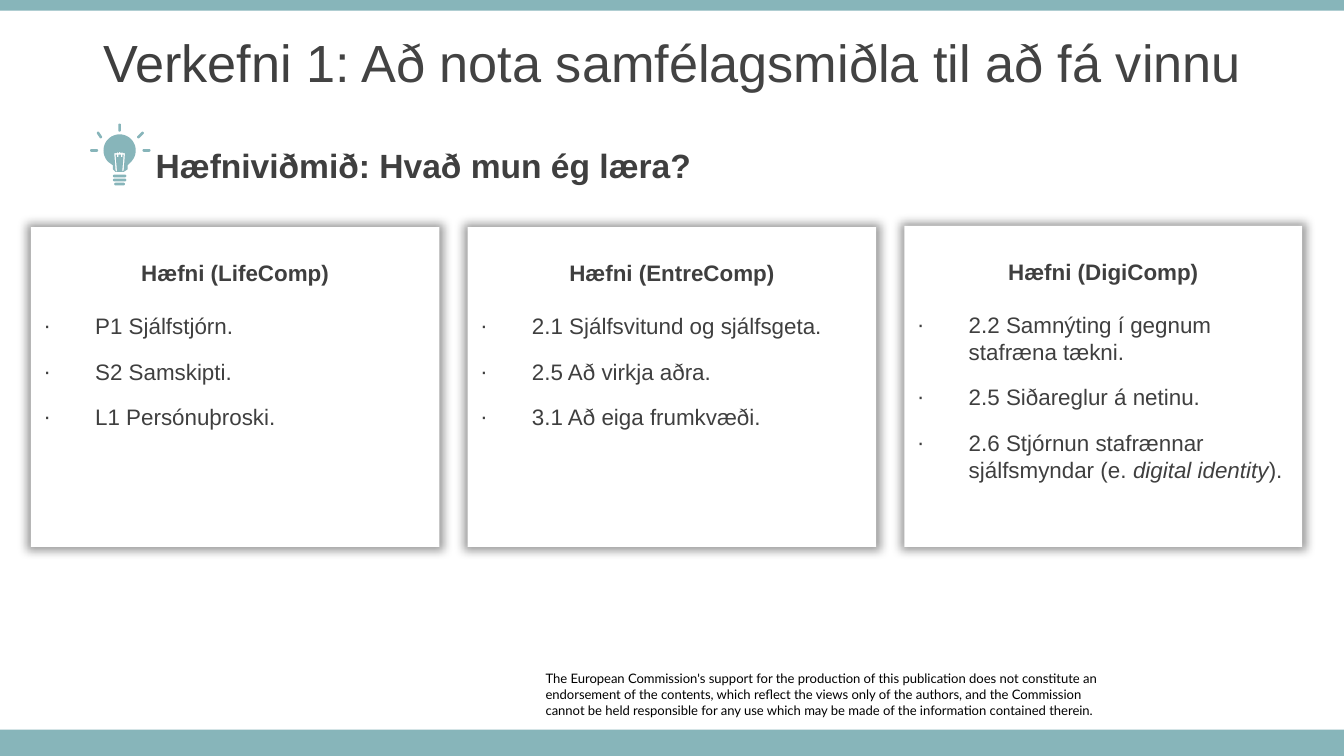
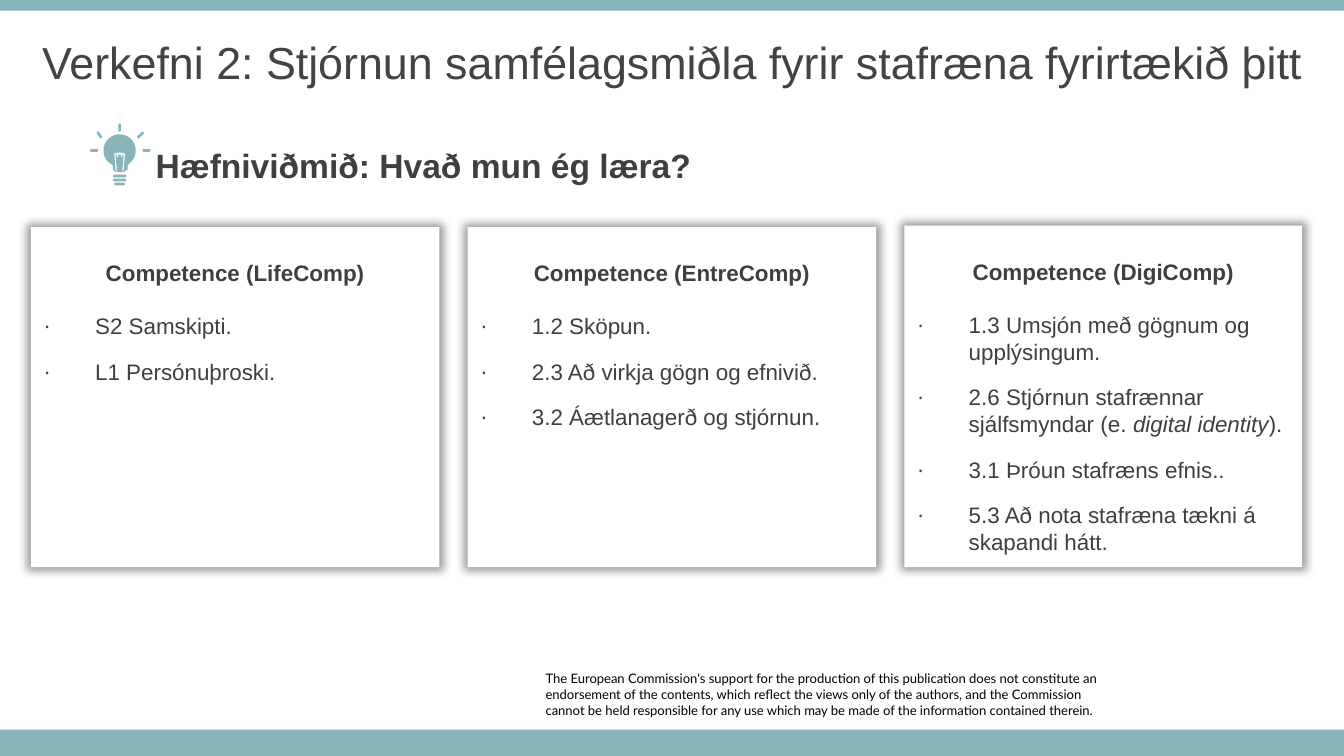
import math

from lxml import etree
from pptx import Presentation
from pptx.dml.color import RGBColor
from pptx.enum.shapes import MSO_SHAPE
from pptx.enum.text import MSO_ANCHOR, PP_ALIGN
from pptx.oxml.ns import qn
from pptx.util import Inches, Pt

RECTANGLE = MSO_SHAPE.RECTANGLE
CENTER, LEFT = PP_ALIGN.CENTER, PP_ALIGN.LEFT
TOP, MIDDLE = MSO_ANCHOR.TOP, MSO_ANCHOR.MIDDLE

TEAL = RGBColor(0x87, 0xB5, 0xBA)
DARK = RGBColor(0x3F, 0x3F, 0x3F)
TITLE_GRAY = RGBColor(0x43, 0x43, 0x43)
WHITE = RGBColor(0xFF, 0xFF, 0xFF)
BLACK = RGBColor(0, 0, 0)
TEXT_FONT, NOTICE_FONT = "Arial", "Lato"

SLIDE_WIDTH = 10
SLIDE_HEIGHT = SLIDE_WIDTH * 9 / 16
CARD_LEFT, CARD_STEP = 0.23, 3.25
CARD_FRAMES = [(1.69, 3.04), (1.69, 3.04), (1.68, 2.96)]  # top, width
BULLET_INDENT = Inches(0.38)

QUESTION = "Hæfniviðmið: Hvað mun ég læra?"
NOTICE = [
    "The European Commission's support for the production of this publication "
    "does not constitute an endorsement of the contents, which reflect the views "
    "only of the authors, and the Commission",
    "cannot be held responsible for any use which may be made of the information "
    "contained therein.",
]

# Light bulb, in inches on the page
BULB_X, BULB_Y, BULB_RADIUS = 0.89, 1.12, 0.12
BULB_BARS = [
    ((0.68, 1.12), (0.72, 1.12)), ((0.73, 0.99), (0.75, 1.02)),
    ((0.89, 0.93), (0.89, 0.97)), ((1.06, 0.99), (1.03, 1.02)),
    ((1.07, 1.12), (1.11, 1.12)), ((0.85, 1.31), (0.93, 1.31)),
    ((0.85, 1.34), (0.93, 1.34)), ((0.86, 1.37), (0.92, 1.37)),
]
HALF_FILAMENT = [
    (0.89, 1.13), (0.88, 1.14), (0.87, 1.13), (0.87, 1.14), (0.85, 1.14),
    (0.86, 1.27), (0.87, 1.28), (0.87, 1.27), (0.86, 1.15), (0.87, 1.15),
    (0.87, 1.17), (0.88, 1.17), (0.88, 1.15), (0.89, 1.15), (0.89, 1.17),
]

# Every card: heading, then entries; the odd spans of an entry are italic
IDENTITY = ["2.6 Stjórnun stafrænnar sjálfsmyndar (e. ", "digital identity", ")."]
SLIDES = [
    {
        "title": [("Verkefni ", DARK),
                  ("1: Að nota samfélagsmiðla til að fá vinnu", TITLE_GRAY)],
        "title_size": 28,
        "card_bottom": 4.07,
        "cards": [
            ("Hæfni (LifeComp)",
             [["P1 Sjálfstjórn."], ["S2 Samskipti."], ["L1 Persónuþroski."]]),
            ("Hæfni (EntreComp)",
             [["2.1 Sjálfsvitund og sjálfsgeta."], ["2.5 Að virkja aðra."],
              ["3.1 Að eiga frumkvæði."]]),
            ("Hæfni (DigiComp)",
             [["2.2 Samnýting í gegnum stafræna tækni."],
              ["2.5 Siðareglur á netinu."], IDENTITY]),
        ],
    },
    {
        "title": [("Verkefni 2: Stjórnun samfélagsmiðla fyrir stafræna fyrirtækið þitt",
                   TITLE_GRAY)],
        "title_size": 24,
        "card_bottom": 4.22,
        "cards": [
            ("Competence (LifeComp)", [["S2 Samskipti."], ["L1 Persónuþroski."]]),
            ("Competence (EntreComp)",
             [["1.2 Sköpun."], ["2.3 Að virkja gögn og efnivið."],
              ["3.2 Áætlanagerð og stjórnun."]]),
            ("Competence (DigiComp)",
             [["1.3 Umsjón með gögnum og upplýsingum."], IDENTITY,
              ["3.1 Þróun stafræns efnis.."],
              ["5.3 Að nota stafræna tækni á skapandi hátt."]]),
        ],
    },
]


def add_span(para, text, size, color=DARK, font=TEXT_FONT, bold=False, italic=False):
    span = para.add_run()
    span.text = text
    span.font.name = font
    span.font.size = Pt(size)
    span.font.color.rgb = color
    span.font.bold = bold
    span.font.italic = italic


def set_insets(frame, side, top, bottom):
    frame.word_wrap = True
    frame.margin_left = frame.margin_right = Inches(side)
    frame.margin_top, frame.margin_bottom = Inches(top), Inches(bottom)


def add_text_box(page, left, top, width, height, side=0.1, edge=0.05, anchor=MIDDLE):
    box = page.shapes.add_textbox(*map(Inches, (left, top, width, height)))
    frame = box.text_frame
    set_insets(frame, side, edge, edge)
    frame.vertical_anchor = anchor
    return frame


def add_rectangle(page, left, top, width, height, color):
    box = page.shapes.add_shape(RECTANGLE, *map(Inches, (left, top, width, height)))
    box.fill.solid()
    box.fill.fore_color.rgb = color
    box.line.fill.background()
    box.shadow.inherit = False
    return box


def add_glow_shadow(box):
    """Give the box an even soft shadow on all sides."""
    effects = box._element.spPr.find(qn("a:effectLst"))
    shadow = etree.SubElement(effects, qn("a:outerShdw"), blurRad=str(Pt(5)),
                              sx="102000", sy="102000", algn="ctr", rotWithShape="0")
    color = etree.SubElement(shadow, qn("a:srgbClr"), val=str(BLACK))
    etree.SubElement(color, qn("a:alpha"), val="40000")


def set_bullet(para):
    properties = para._p.get_or_add_pPr()
    properties.set("marL", str(BULLET_INDENT))
    properties.set("indent", str(-BULLET_INDENT))
    color = etree.SubElement(properties, qn("a:buClr"))
    etree.SubElement(color, qn("a:srgbClr"), val=str(DARK))
    etree.SubElement(properties, qn("a:buFont"), typeface=TEXT_FONT)
    etree.SubElement(properties, qn("a:buChar"), char="∙")


def add_card(page, left, top, width, height, heading, entries):
    card = add_rectangle(page, left, top, width, height, WHITE)
    add_glow_shadow(card)
    frame = card.text_frame
    set_insets(frame, 0.1, 0.24, 0.05)
    frame.vertical_anchor = TOP
    para = frame.paragraphs[0]
    para.alignment = CENTER
    add_span(para, heading, 12, bold=True)
    for number, spans in enumerate(entries):
        para = frame.add_paragraph()
        set_bullet(para)
        para.alignment = LEFT
        para.space_before = Pt(10 if number else 14)
        for index, text in enumerate(spans):
            add_span(para, text, 12, italic=index % 2 == 1)


def arc(x, y, radius, start, end, steps):
    """Points on an arc, with angles in degrees, clockwise from the right."""
    angles = [math.radians(start + (end - start) * i / steps) for i in range(steps + 1)]
    return [(x + radius * math.cos(a), y + radius * math.sin(a)) for a in angles]


def rounded_bar(start, end):
    angle = math.degrees(math.atan2(end[1] - start[1], end[0] - start[0]))
    return (arc(*start, 0.01, angle + 90, angle + 270, 6)
            + arc(*end, 0.01, angle - 90, angle + 90, 6))


def add_light_bulb(page):
    glass = arc(BULB_X, BULB_Y, BULB_RADIUS, 135, 405, 36)
    glass += [(0.95, 1.23), (0.95, 1.26), (0.92, 1.28),
              (0.86, 1.28), (0.84, 1.26), (0.84, 1.23)]
    mirrored = [(2 * BULB_X - x, y) for x, y in reversed(HALF_FILAMENT)]
    contours = [glass, HALF_FILAMENT + mirrored]
    contours += [rounded_bar(*bar) for bar in BULB_BARS]
    builder = None
    for contour in contours:
        first, *rest = [(Inches(x), Inches(y)) for x, y in contour]
        if builder is None:
            builder = page.shapes.build_freeform(*first)
        else:
            builder.move_to(*first)
        builder.add_line_segments(rest, close=True)
    bulb = builder.convert_to_shape()
    bulb.fill.solid()
    bulb.fill.fore_color.rgb = TEAL
    bulb.line.fill.background()
    bulb.shadow.inherit = False


def add_page_frame(page):
    """Add the notice and the bands that all slides share."""
    frame = add_text_box(page, 4.06, 4.99, 4.17, 0.35, side=0, edge=0, anchor=TOP)
    for index, text in enumerate(NOTICE):
        para = frame.add_paragraph() if index else frame.paragraphs[0]
        add_span(para, text, 7, BLACK, NOTICE_FONT)
    add_rectangle(page, 0, 5.43, SLIDE_WIDTH, 0.2, TEAL)
    add_rectangle(page, 0, 0, SLIDE_WIDTH, 0.08, TEAL)


def add_title(page, spans, size):
    para = add_text_box(page, 0, 0.14, SLIDE_WIDTH, 0.63).paragraphs[0]
    para.alignment = CENTER
    for text, color in spans:
        add_span(para, text, size, color)


def add_question(page):
    add_light_bulb(page)
    frame = add_text_box(page, 1.06, 1.07, 4.88, 0.31)
    add_span(frame.paragraphs[0], QUESTION, 18, bold=True)


def main():
    deck = Presentation()
    deck.slide_width, deck.slide_height = Inches(SLIDE_WIDTH), Inches(SLIDE_HEIGHT)
    for content in SLIDES:
        page = deck.slides.add_slide(deck.slide_layouts[6])
        add_page_frame(page)
        add_title(page, content["title"], content["title_size"])
        add_question(page)
        for column, (heading, entries) in enumerate(content["cards"]):
            top, width = CARD_FRAMES[column]
            add_card(page, CARD_LEFT + column * CARD_STEP, top, width,
                     content["card_bottom"] - top, heading, entries)
    deck.save("out.pptx")


if __name__ == "__main__":
    main()
